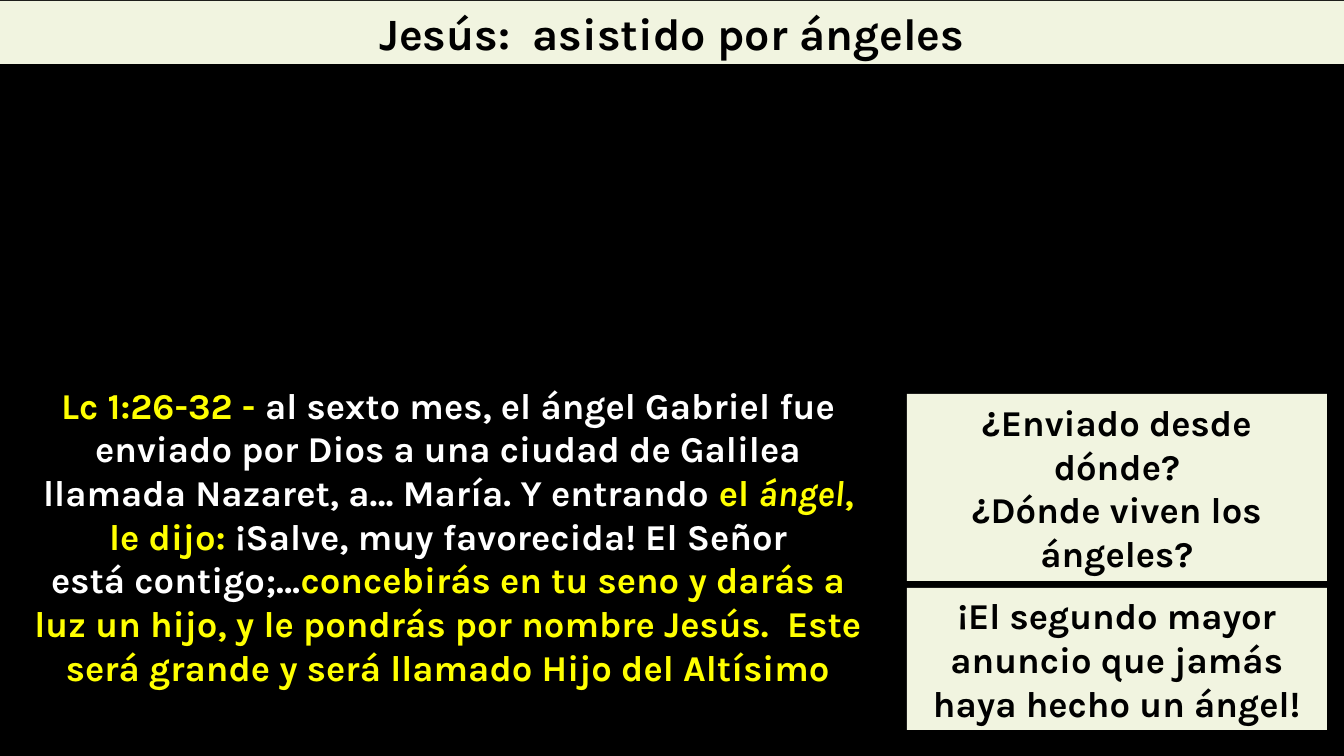
from pptx import Presentation
from pptx.dml.color import RGBColor
from pptx.enum.shapes import MSO_SHAPE
from pptx.enum.text import MSO_ANCHOR, PP_ALIGN
from pptx.util import Emu, Pt

RECTANGLE = MSO_SHAPE.RECTANGLE
TOP, MIDDLE = MSO_ANCHOR.TOP, MSO_ANCHOR.MIDDLE
CENTER = PP_ALIGN.CENTER

PX = 9072  # EMU per px at 100.8 px to the inch
WIDTH, HEIGHT = 1344, 756
FONT = "Karla"
BLACK, WHITE, YELLOW, CREAM = "000000", "FFFFFF", "FFFF00", "F1F4E0"
TIE, HARD_SPACE = "~", chr(160)  # a tie in the content keeps two words together

# Content: each paragraph is a list of (text, colour, italic) runs
TITLE = [[("Jesús:  asistido por ángeles", BLACK, False)]]
VERSE = [[
    ("Lc 1:26-32 - ", YELLOW, False),
    ("al sexto mes, el ángel Gabriel~fue enviado por Dios a una ciudad de "
     "Galilea llamada Nazaret,~a… María. Y entrando ", WHITE, False),
    ("el~", YELLOW, False),
    ("ángel", YELLOW, True),
    (", le dijo: ", YELLOW, False),
    ("¡Salve, muy favorecida! El Señor está~contigo;…", WHITE, False),
    ("concebirás en tu seno y darás a luz un hijo, y le pondrás por~nombre "
     "Jesús.~~Este será grande y será llamado Hijo del Altísimo", YELLOW, False),
]]
QUESTIONS = [
    [("¿Enviado desde dónde?", BLACK, False)],
    [("¿Dónde viven los ángeles?", BLACK, False)],
]
ANNOUNCEMENT = [
    [("¡El segundo mayor anuncio que jamás haya hecho un ángel!", BLACK, False)],
]

# Panels: (left, top, width, height) in px, text size, paragraphs
PANELS = [
    ((0, 1, WIDTH, 63), 32, TITLE),
    ((907, 394, 420, 187), 26, QUESTIONS),
    ((907, 588, 420, 142), 26, ANNOUNCEMENT),
]
VERSE_BOX = (17, 378, 863, 363)


def color(hex_value):
    return RGBColor.from_string(hex_value)


def emu(box):
    return [Emu(length * PX) for length in box]


def write(shape, paragraphs, size, anchor):
    frame = shape.text_frame
    frame.word_wrap = True
    frame.vertical_anchor = anchor
    for index, runs in enumerate(paragraphs):
        paragraph = frame.add_paragraph() if index else frame.paragraphs[0]
        paragraph.alignment = CENTER
        for text, hex_value, italic in runs:
            run = paragraph.add_run()
            run.text = text.replace(TIE, HARD_SPACE)
            run.font.name = FONT
            run.font.size = Pt(size)
            run.font.bold = True
            run.font.italic = italic
            run.font.color.rgb = color(hex_value)


def main():
    presentation = Presentation()
    presentation.slide_width, presentation.slide_height = emu((WIDTH, HEIGHT))
    slide = presentation.slides.add_slide(presentation.slide_layouts[6])
    background = slide.background.fill
    background.solid()
    background.fore_color.rgb = color(BLACK)

    # Title bar and side panels
    for box, size, paragraphs in PANELS:
        panel = slide.shapes.add_shape(RECTANGLE, *emu(box))
        panel.shadow.inherit = False
        panel.fill.solid()
        panel.fill.fore_color.rgb = color(CREAM)
        panel.line.fill.background()
        write(panel, paragraphs, size, MIDDLE)

    # Bible verse
    verse = slide.shapes.add_textbox(*emu(VERSE_BOX))
    write(verse, VERSE, 26, TOP)

    presentation.save("out.pptx")


if __name__ == "__main__":
    main()
